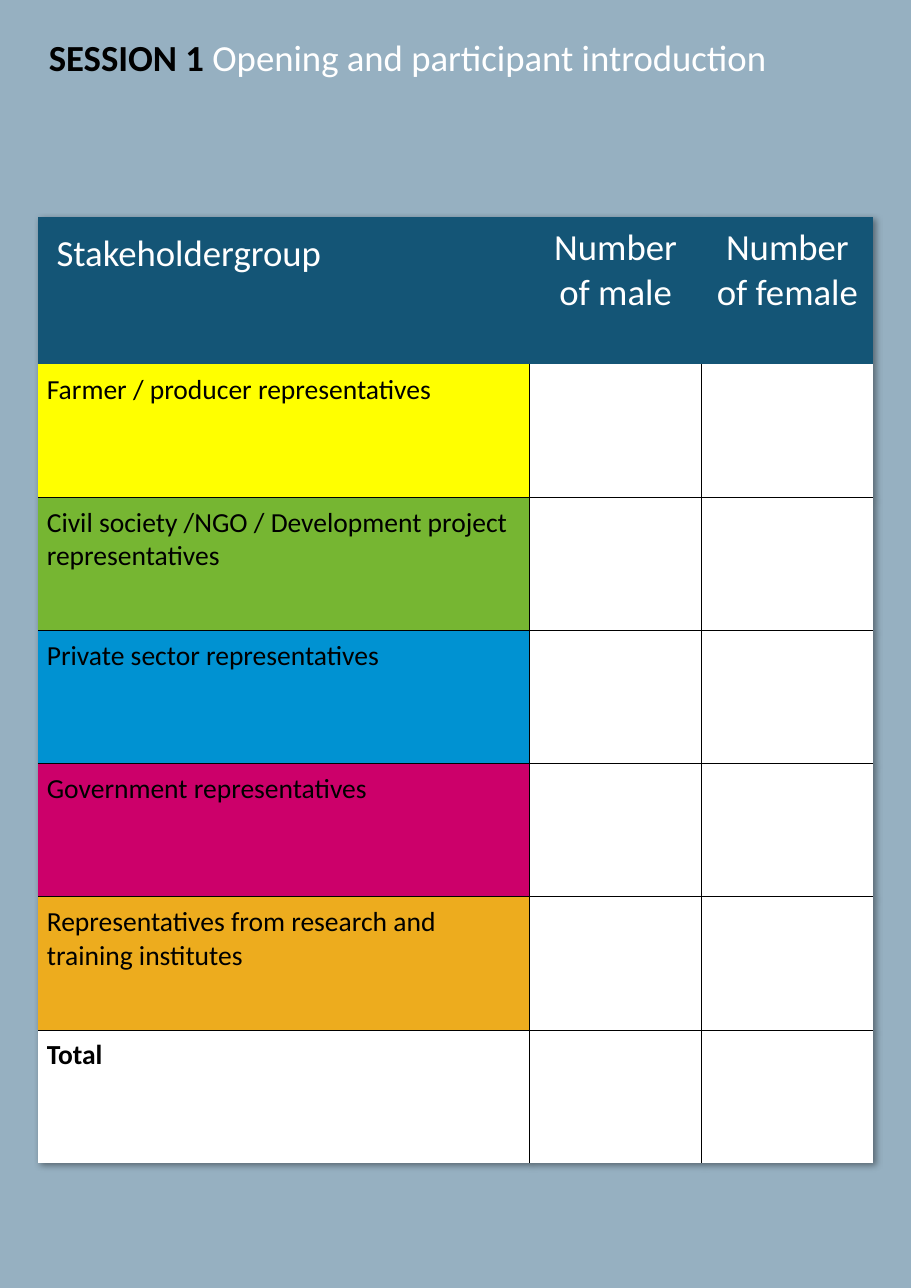
import dataclasses

import lxml.etree
import pptx
import pptx.dml.color
import pptx.enum.text
import pptx.oxml.ns
import pptx.table
import pptx.text.text
import pptx.util
from pptx.util import Cm

FONT = "Calibri"
COLORS = {
    "background": "96B0C1",
    "header": "145576",
    "farmers": "FFFF00",
    "civil": "76B632",
    "private": "0092D2",
    "government": "CC006A",
    "research": "EDAC1E",
    "white": "FFFFFF",
    "black": "000000",
}
BORDER_WIDTH = pptx.util.Pt(0.5)
CELL_MARGIN = Cm(0.2)
COLUMN_WIDTHS = (Cm(11.33), Cm(3.96), Cm(3.96))
HEADER_HEIGHT = Cm(3.4)
GROUP_HEIGHT = Cm(3.07)
COUNT_HEADINGS = ("Number of male", "Number of female")


@dataclasses.dataclass(frozen=True)
class StakeholderGroup:
    label: str
    color: str
    bold: bool = False


GROUPS = (
    StakeholderGroup("Farmer / producer representatives", "farmers"),
    StakeholderGroup("Civil society /NGO / Development project representatives", "civil"),
    StakeholderGroup("Private sector representatives", "private"),
    StakeholderGroup("Government representatives", "government"),
    StakeholderGroup("Representatives from research and training institutes", "research"),
    StakeholderGroup("Total", "white", bold=True),
)


def rgb(color: str) -> pptx.dml.color.RGBColor:
    return pptx.dml.color.RGBColor.from_string(COLORS[color])


def add_element(parent: lxml.etree._Element, tag: str, **attributes: str) -> lxml.etree._Element:
    return lxml.etree.SubElement(parent, pptx.oxml.ns.qn(tag), attributes)


def add_run(paragraph: pptx.text.text._Paragraph, text: str, size: int, color: str,
            bold: bool = False) -> None:
    run = paragraph.add_run()
    run.text = text
    run.font.name = FONT
    run.font.size = pptx.util.Pt(size)
    run.font.bold = bold
    run.font.color.rgb = rgb(color)


def format_cell(cell: pptx.table._Cell, color: str, borders: dict[str, bool]) -> None:
    """Set margins, borders and fill; borders must precede the fill in the XML."""
    cell.margin_left = cell.margin_right = CELL_MARGIN
    cell.margin_top = cell.margin_bottom = CELL_MARGIN
    properties = cell._tc.get_or_add_tcPr()
    for side, visible in borders.items():
        line = add_element(properties, f"a:ln{side}", w=str(BORDER_WIDTH))
        if visible:
            add_element(add_element(line, "a:solidFill"), "a:srgbClr", val=COLORS["black"])
        else:
            add_element(line, "a:noFill")
    cell.fill.solid()
    cell.fill.fore_color.rgb = rgb(color)


def add_table_shadow(table: pptx.table.Table) -> None:
    properties = table._tbl.tblPr
    effects = add_element(properties, "a:effectLst")
    shadow = add_element(effects, "a:outerShdw", blurRad="50800", dist="38100",
                         dir="2700000", algn="tl", rotWithShape="0")
    shade = add_element(shadow, "a:srgbClr", val=COLORS["black"])
    add_element(shade, "a:alpha", val="40000")
    properties.insert(0, effects)


presentation = pptx.Presentation()
presentation.slide_width, presentation.slide_height = Cm(21), Cm(29.7)
slide = presentation.slides.add_slide(presentation.slide_layouts[5])
slide.background.fill.solid()
slide.background.fill.fore_color.rgb = rgb("background")

session = slide.shapes.title
session.left, session.top, session.width, session.height = Cm(0.87), Cm(0.67), Cm(19.25), Cm(1.28)
session.text_frame.vertical_anchor = pptx.enum.text.MSO_ANCHOR.TOP
session.text_frame.auto_size = pptx.enum.text.MSO_AUTO_SIZE.NONE
session_line = session.text_frame.paragraphs[0]
session_line.alignment = pptx.enum.text.PP_ALIGN.LEFT
add_run(session_line, "SESSION 1 ", 24, "black", bold=True)
add_run(session_line, "Opening and participant introduction", 24, "white")

participants = slide.shapes.add_table(
    len(GROUPS) + 1, len(COLUMN_WIDTHS), Cm(0.88), Cm(5), sum(COLUMN_WIDTHS),
    HEADER_HEIGHT + GROUP_HEIGHT * len(GROUPS)).table
participants.first_row = participants.horz_banding = False
add_table_shadow(participants)
for column, width in zip(participants.columns, COLUMN_WIDTHS):
    column.width = width

last_row, last_column = len(GROUPS), len(COLUMN_WIDTHS) - 1
for row_index, row in enumerate(participants.rows):
    is_header = row_index == 0
    row.height = HEADER_HEIGHT if is_header else GROUP_HEIGHT
    for column_index, cell in enumerate(row.cells):
        if is_header:
            color = "header"
        else:
            color = GROUPS[row_index - 1].color if column_index == 0 else "white"
        format_cell(cell, color, {
            "L": not is_header and column_index > 0,
            "R": not is_header and column_index < last_column,
            "T": row_index > 1,
            "B": 0 < row_index < last_row,
        })

group_heading = participants.cell(0, 0).text_frame.paragraphs[0]
add_run(group_heading, " ", 28, "white")
add_run(group_heading, "Stakeholdergroup", 24, "white")
for column_index, heading in enumerate(COUNT_HEADINGS, start=1):
    count_heading = participants.cell(0, column_index).text_frame.paragraphs[0]
    count_heading.alignment = pptx.enum.text.PP_ALIGN.CENTER
    add_run(count_heading, heading, 24, "white")
for row_index, group in enumerate(GROUPS, start=1):
    group_label = participants.cell(row_index, 0).text_frame.paragraphs[0]
    add_run(group_label, group.label, 18, "black", group.bold)

presentation.save("out.pptx")
